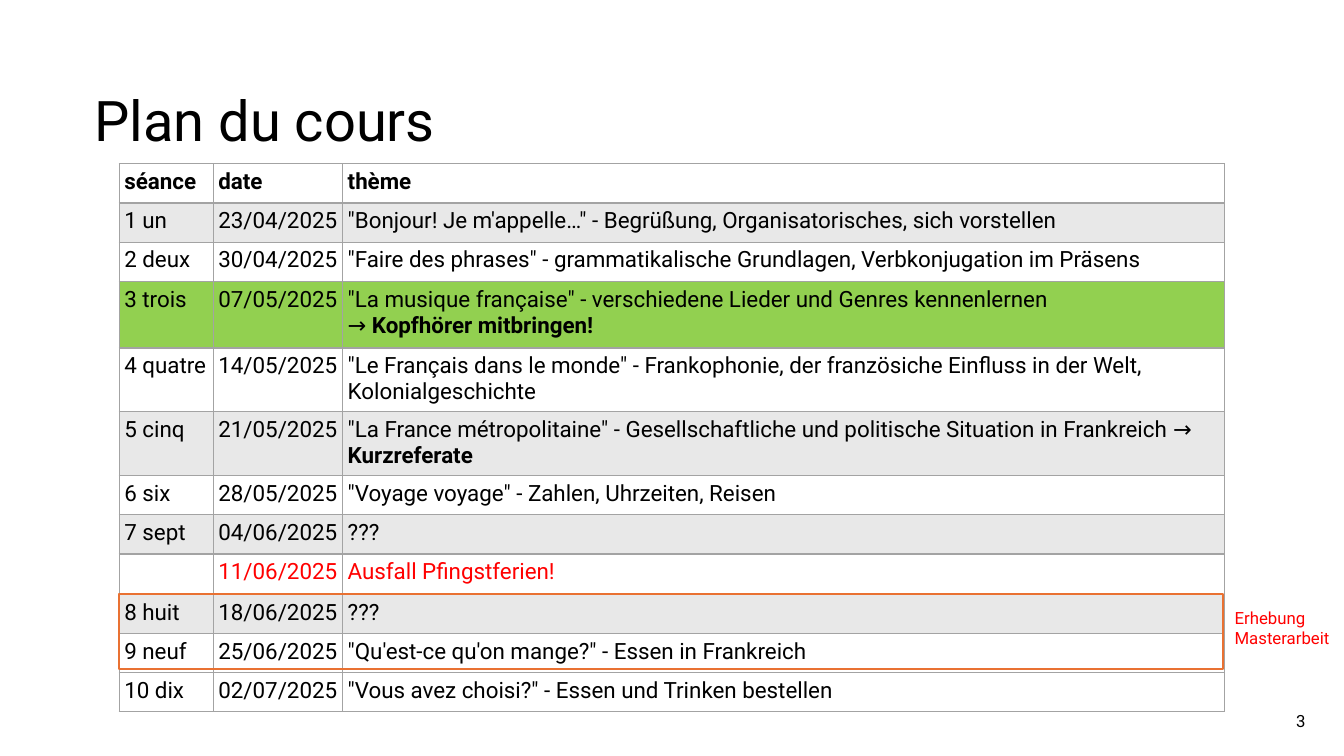
from pptx import Presentation
from pptx.dml.color import RGBColor
from pptx.enum.shapes import MSO_SHAPE as Shape
from pptx.enum.text import MSO_ANCHOR as Anchor, PP_ALIGN as Align
from pptx.oxml import parse_xml
from pptx.oxml.ns import nsdecls
from pptx.util import Pt

BLACK = RGBColor(0x00, 0x00, 0x00)
WHITE = RGBColor(0xFF, 0xFF, 0xFF)
GREY = RGBColor(0xE8, 0xE8, 0xE8)
GREEN = RGBColor(0x92, 0xD0, 0x50)
RED = RGBColor(0xFF, 0x00, 0x00)
ORANGE = RGBColor(0xE9, 0x71, 0x32)
BORDER = RGBColor(0xA3, 0xA3, 0xA3)

FONT = "Roboto"
BOLD_MARK = "*"
COLUMN_WIDTHS = (67.2, 92.4, 630)
ROW_HEIGHT, WRAPPED_HEIGHT, HIGHLIGHT_HEIGHT = 28, 43.8, 47.6

HEADER = ("séance", "date", "thème")
SESSIONS = [
    ("1 un", "23/04/2025", "\"Bonjour! Je m'appelle…\" - Begrüßung, Organisatorisches, sich vorstellen"),
    ("2 deux", "30/04/2025", '"Faire des phrases" - grammatikalische Grundlagen, Verbkonjugation im Präsens'),
    ("3 trois", "07/05/2025",
     '"La musique française" - verschiedene Lieder und Genres kennenlernen\n→ *Kopfhörer mitbringen!*'),
    ("4 quatre", "14/05/2025",
     '"Le Français dans le monde" - Frankophonie, der französiche Einfluss in der Welt, Kolonialgeschichte'),
    ("5 cinq", "21/05/2025",
     '"La France métropolitaine" - Gesellschaftliche und politische Situation in Frankreich → *Kurzreferate*'),
    ("6 six", "28/05/2025", '"Voyage voyage" - Zahlen, Uhrzeiten, Reisen'),
    ("7 sept", "04/06/2025", "???"),
    ("", "11/06/2025", "Ausfall Pfingstferien!"),
    ("8 huit", "18/06/2025", "???"),
    ("9 neuf", "25/06/2025", '"Qu\'est-ce qu\'on mange?" - Essen in Frankreich'),
    ("10 dix", "02/07/2025", '"Vous avez choisi?" - Essen und Trinken bestellen'),
]
HIGHLIGHT_ROW, CANCELLED_ROW = 3, 8
GREY_ROWS = (1, 5, 7, 9)
ROW_HEIGHTS = {HIGHLIGHT_ROW: HIGHLIGHT_HEIGHT, 4: WRAPPED_HEIGHT, 5: WRAPPED_HEIGHT}


def write_text(frame, text, size=16, color=BLACK, bold=False, align=Align.LEFT,
               line_spacing=None, space_after=0):
    for index, line in enumerate(text.split("\n")):
        paragraph = frame.add_paragraph() if index else frame.paragraphs[0]
        paragraph.alignment = align
        paragraph.line_spacing = line_spacing
        paragraph.space_after = Pt(space_after)
        for part_index, part in enumerate(line.split(BOLD_MARK)):
            if part:
                run = paragraph.add_run()
                run.text = part
                run.font.name = FONT
                run.font.size = Pt(size)
                run.font.bold = bold or part_index % 2 == 1
                run.font.color.rgb = color


def add_label(slide, text, left, top, width, height, anchor=Anchor.TOP, **text_format):
    frame = slide.shapes.add_textbox(Pt(left), Pt(top), Pt(width), Pt(height)).text_frame
    frame.word_wrap = True
    frame.vertical_anchor = anchor
    write_text(frame, text, **text_format)


def add_rectangle(slide, left, top, width, height, fill=None, line=None):
    shape = slide.shapes.add_shape(Shape.RECTANGLE, Pt(left), Pt(top), Pt(width), Pt(height))
    shape.shadow.inherit = False
    if fill is None:
        shape.fill.background()
    else:
        shape.fill.solid()
        shape.fill.fore_color.rgb = fill
    if line is None:
        shape.line.fill.background()
    else:
        shape.line.color.rgb = line
        shape.line.width = Pt(1.5)


def add_borders(cell):
    properties = cell._tc.get_or_add_tcPr()
    for index, side in enumerate(("lnL", "lnR", "lnT", "lnB")):
        properties.insert(index, parse_xml(
            f'<a:{side} {nsdecls("a")} w="{Pt(1)}"><a:solidFill>'
            f'<a:srgbClr val="{BORDER}"/></a:solidFill></a:{side}>'))


def fill_cell(cell, text, fill, **text_format):
    cell.margin_left = cell.margin_right = cell.margin_top = cell.margin_bottom = Pt(3.6)
    cell.fill.solid()
    cell.fill.fore_color.rgb = fill
    add_borders(cell)
    write_text(cell.text_frame, text, **text_format)


def row_fill(index):
    if index == HIGHLIGHT_ROW:
        return GREEN
    return GREY if index in GREY_ROWS else WHITE


def add_schedule(slide, left, top):
    rows = [HEADER, *SESSIONS]
    heights = [ROW_HEIGHTS.get(index, ROW_HEIGHT) for index in range(len(rows))]
    table = slide.shapes.add_table(len(rows), len(HEADER), Pt(left), Pt(top),
                                   Pt(sum(COLUMN_WIDTHS)), Pt(sum(heights))).table
    for column, width in zip(table.columns, COLUMN_WIDTHS):
        column.width = Pt(width)
    for index, (row, height, texts) in enumerate(zip(table.rows, heights, rows)):
        row.height = Pt(height)
        for cell, text in zip(row.cells, texts):
            fill_cell(cell, text, row_fill(index), bold=index == 0,
                      color=RED if index == CANCELLED_ROW else BLACK)


def main():
    presentation = Presentation()
    presentation.slide_width, presentation.slide_height = Pt(960), Pt(540)
    slide = presentation.slides.add_slide(presentation.slide_layouts[6])
    add_rectangle(slide, 0, 0, 960, 134, fill=WHITE)
    add_label(slide, "Plan du cours", 60.5, 42.5, 825, 91.5,
              anchor=Anchor.MIDDLE, size=40, line_spacing=0.9)
    add_label(slide, "3", 687.6, 500.4, 252, 28.8,
              anchor=Anchor.MIDDLE, size=12, align=Align.RIGHT, space_after=6)
    add_schedule(slide, 85.2, 117)
    add_rectangle(slide, 85, 424, 788.4, 54, line=ORANGE)
    add_label(slide, "Erhebung Masterarbeit", 874.8, 430.6, 83.5, 36, size=12, color=RED)
    presentation.save("out.pptx")


if __name__ == "__main__":
    main()
